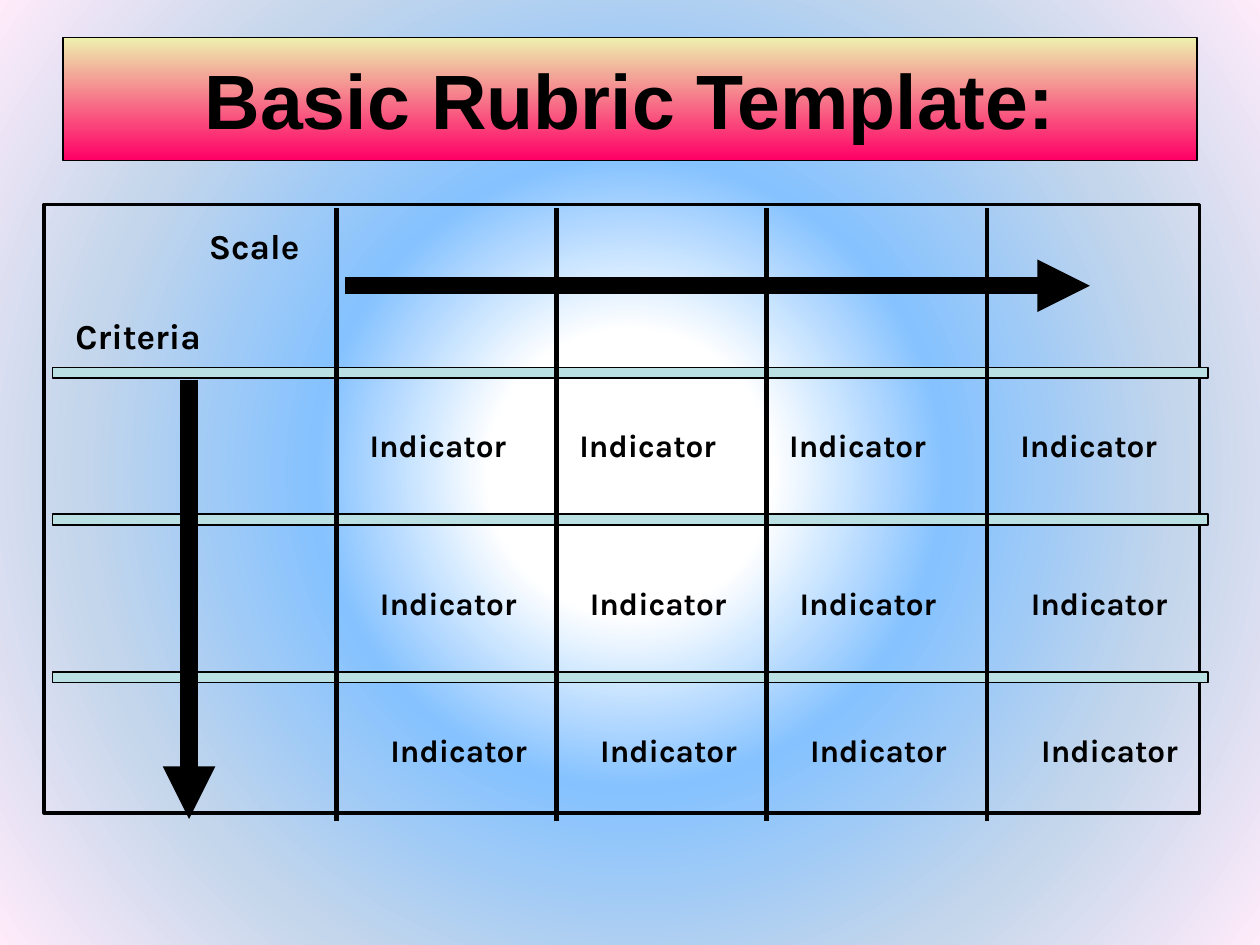
from dataclasses import dataclass

from lxml import etree
from pptx import Presentation
from pptx.dml.color import RGBColor
from pptx.enum.shapes import MSO_CONNECTOR, MSO_SHAPE
from pptx.enum.text import MSO_ANCHOR, MSO_AUTO_SIZE, PP_ALIGN
from pptx.oxml.ns import qn
from pptx.util import Cm, Pt

STRAIGHT = MSO_CONNECTOR.STRAIGHT
RECTANGLE = MSO_SHAPE.RECTANGLE
MIDDLE = MSO_ANCHOR.MIDDLE
CENTER = PP_ALIGN.CENTER
GROW = MSO_AUTO_SIZE.SHAPE_TO_FIT_TEXT

BLACK = "000000"
BAR_COLOR = "BBE0E3"
TITLE_STOPS = ("EEF0AE", "FF0066")
BACKGROUND_STOPS = ((18, "FFFFFF"), (40, "85C2FF"), (70, "C4D6EB"), (100, "FFEBFA"))

DIVIDER_X = (6.78, 11.22, 15.45, 19.9)
DIVIDER_TOP, GRID_BOTTOM = 4.23, 16.51
BAR_Y = (7.41, 10.37, 13.55)
INDICATOR_X = (7.2, 11.43, 15.66, 20.32)
INDICATOR_Y = (8.47, 11.64, 14.61)
ROW_SHIFT = 0.21


@dataclass
class Box:
    """A rectangle in centimetres."""
    left: float
    top: float
    width: float
    height: float

    def lengths(self) -> tuple:
        return Cm(self.left), Cm(self.top), Cm(self.width), Cm(self.height)


@dataclass
class Rule:
    """A straight line in centimetres, with its weight in points."""
    x1: float
    y1: float
    x2: float
    y2: float
    weight: float
    arrow: bool = False


def rgb(color: str) -> RGBColor:
    return RGBColor.from_string(color)


def paint_background(slide) -> None:
    """Spread the background stops in circles from the centre."""
    slide.background.fill.gradient()
    gradient = slide._element.find(".//" + qn("a:gradFill"))
    for child in list(gradient):
        gradient.remove(child)
    stops = etree.SubElement(gradient, qn("a:gsLst"))
    for position, color in BACKGROUND_STOPS:
        stop = etree.SubElement(stops, qn("a:gs"), pos=str(position * 1000))
        etree.SubElement(stop, qn("a:srgbClr"), val=color)
    circle = etree.SubElement(gradient, qn("a:path"), path="circle")
    etree.SubElement(circle, qn("a:fillToRect"), l="50000", t="50000", r="50000", b="50000")


def style_outline(shape, weight: float) -> None:
    shape.line.color.rgb = rgb(BLACK)
    shape.line.width = Pt(weight)


def style_text(paragraph, font_name: str, size: float) -> None:
    for run in paragraph.runs:
        run.font.name = font_name
        run.font.size = Pt(size)
        run.font.bold = True
        run.font.color.rgb = rgb(BLACK)


def fill_title(slide, text: str, box: Box) -> None:
    title = slide.shapes.title
    title.left, title.top, title.width, title.height = box.lengths()
    title.fill.gradient()
    title.fill.gradient_angle = 270
    for stop, position, color in zip(title.fill.gradient_stops, (0, 1), TITLE_STOPS):
        stop.position = position
        stop.color.rgb = rgb(color)
    style_outline(title, 0.75)
    frame = title.text_frame
    frame.text = text
    frame.vertical_anchor = MIDDLE
    frame.paragraphs[0].alignment = CENTER
    style_text(frame.paragraphs[0], "Arial", 44)


def add_rectangle(slide, box: Box, weight: float, color: str | None = None) -> None:
    rectangle = slide.shapes.add_shape(RECTANGLE, *box.lengths())
    rectangle.shadow.inherit = False
    if color:
        rectangle.fill.solid()
        rectangle.fill.fore_color.rgb = rgb(color)
    else:
        rectangle.fill.background()
    style_outline(rectangle, weight)


def add_rule(slide, rule: Rule) -> None:
    connector = slide.shapes.add_connector(
        STRAIGHT, Cm(rule.x1), Cm(rule.y1), Cm(rule.x2), Cm(rule.y2))
    style_outline(connector, rule.weight)
    properties = connector._element.spPr
    outline = properties.find(qn("a:ln"))
    outline.set("cap", "sq")
    if rule.arrow:
        etree.SubElement(outline, qn("a:tailEnd"), type="triangle")
    etree.SubElement(properties, qn("a:effectLst"))


def add_label(slide, text: str, box: Box, size: float):
    """Add bold text, one paragraph a line, and return its frame."""
    frame = slide.shapes.add_textbox(*box.lengths()).text_frame
    frame.word_wrap = True
    frame.auto_size = GROW
    frame.text = text
    for paragraph in frame.paragraphs:
        style_text(paragraph, "Karla", size)
    return frame


def add_axis_labels(slide) -> None:
    frame = add_label(slide, "Scale\nCriteria", Box(1.27, 4.66, 5.93, 2.77), 20)
    scale, criteria = frame.paragraphs
    scale.line_spacing = criteria.line_spacing = 0.65
    scale._p.get_or_add_pPr().set("marL", str(Cm(2.69)))
    criteria.space_before = Pt(36)


def main() -> None:
    presentation = Presentation()
    presentation.slide_width, presentation.slide_height = Cm(25.4), Cm(19.05)
    slide = presentation.slides.add_slide(presentation.slide_layouts[5])
    paint_background(slide)
    fill_title(slide, "Basic Rubric Template:", Box(1.27, 0.76, 22.86, 2.47))

    add_rectangle(slide, Box(0.89, 4.12, 23.29, 12.27), 2)
    for y in BAR_Y:
        add_rectangle(slide, Box(1.06, y, 23.29, 0.21), 1, BAR_COLOR)
    for x in DIVIDER_X:
        add_rule(slide, Rule(x, DIVIDER_TOP, x, GRID_BOTTOM, 2.5))
    add_rule(slide, Rule(3.81, 7.83, 3.81, GRID_BOTTOM, 10, arrow=True))
    add_rule(slide, Rule(7.14, 5.76, 21.97, 5.76, 10, arrow=True))

    add_axis_labels(slide)
    for row, y in enumerate(INDICATOR_Y):
        for x in INDICATOR_X:
            add_label(slide, "Indicator", Box(x + row * ROW_SHIFT, y, 3.81, 1.02), 18)

    presentation.save("out.pptx")


if __name__ == "__main__":
    main()
